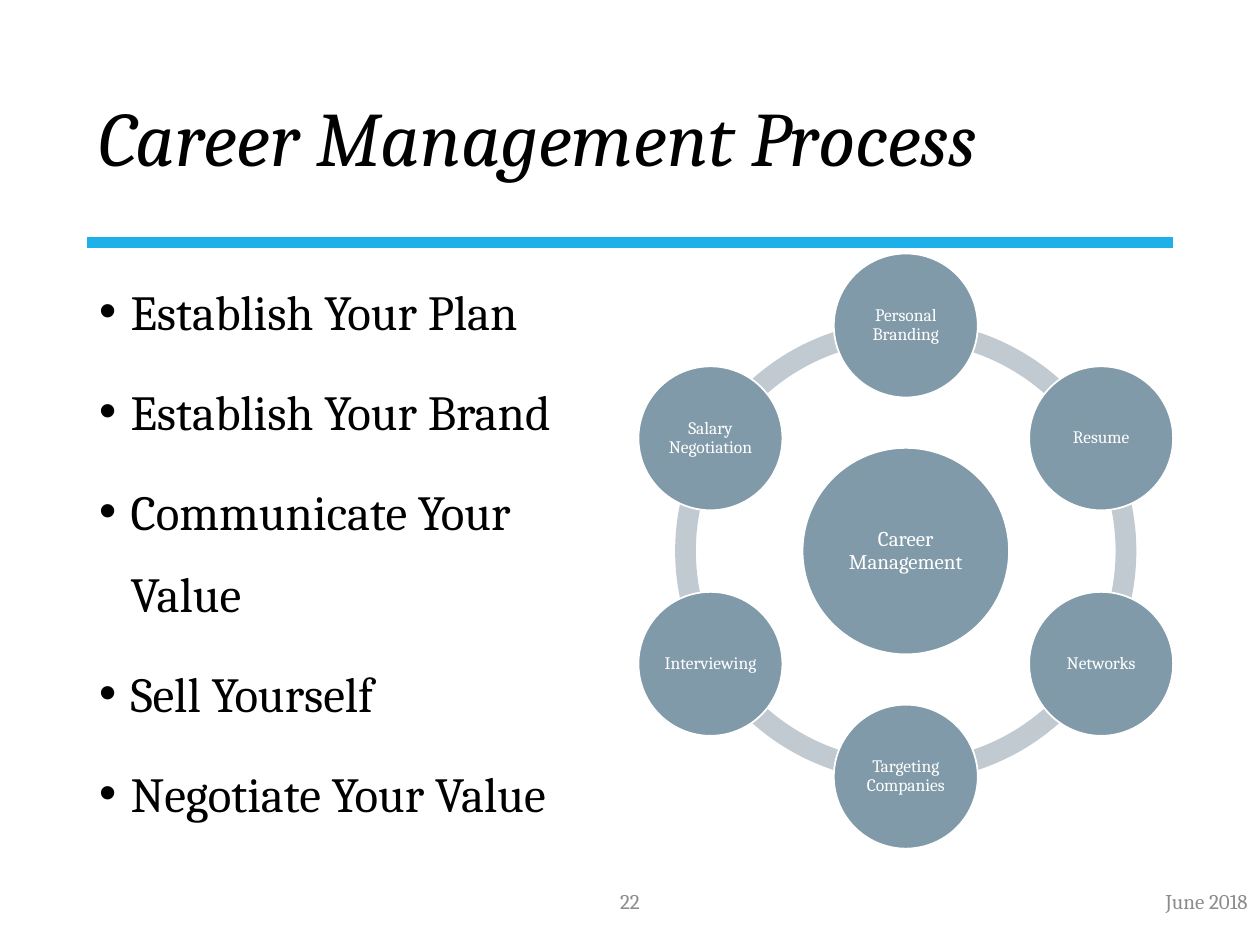
import math

import lxml.etree
import pptx
import pptx.dml.color
import pptx.enum.shapes
import pptx.enum.text
import pptx.oxml.ns
import pptx.util

Pt = pptx.util.Pt
Shape = pptx.enum.shapes.MSO_SHAPE
Align = pptx.enum.text.PP_ALIGN
Anchor = pptx.enum.text.MSO_ANCHOR
qn = pptx.oxml.ns.qn

COLORS = {
    "text": "000000",
    "rule": "1DB0E9",
    "node": "819AA9",
    "ring": "C1CAD1",
    "light": "FFFFFF",
    "footer": "8C8C8C",
}


class SlideBuilder:
    """Holds the style and the current slide."""

    font_name = "Cambria"

    def __init__(self, slide):
        self.slide = slide

    def color(self, name):
        return pptx.dml.color.RGBColor.from_string(COLORS[name])

    def style(self, para, size, color, align, spacing=1.0, italic=False):
        para.alignment = align
        para.line_spacing = spacing
        para.font.name = self.font_name
        para.font.size = Pt(size)
        para.font.italic = italic
        para.font.color.rgb = self.color(color)

    def text_box(self, left, top, width, height, anchor):
        box = self.slide.shapes.add_textbox(Pt(left), Pt(top), Pt(width), Pt(height))
        box.text_frame.word_wrap = True
        box.text_frame.vertical_anchor = anchor
        return box.text_frame

    def text(self, words, left, top, width, height, size, color, align, **style):
        frame = self.text_box(left, top, width, height, Anchor.MIDDLE)
        para = frame.paragraphs[0]
        para.text = words
        self.style(para, size, color, align, **style)

    def bullets(self, items, left, top, width, height, size, indent):
        frame = self.text_box(left, top, width, height, Anchor.TOP)
        for index, item in enumerate(items):
            para = frame.paragraphs[0] if index == 0 else frame.add_paragraph()
            para.text = item
            if index:
                para.space_before = Pt(10)
            properties = para._p.get_or_add_pPr()
            properties.set("marL", str(Pt(indent)))
            properties.set("indent", str(-Pt(indent)))
            lxml.etree.SubElement(properties, qn("a:buFont"), typeface="Arial")
            lxml.etree.SubElement(properties, qn("a:buChar"), char="•")
            self.style(para, size, "text", Align.LEFT, spacing=1.4)

    def rule(self, left, right, y, width):
        line = self.slide.shapes.add_connector(
            pptx.enum.shapes.MSO_CONNECTOR.STRAIGHT, Pt(left), Pt(y), Pt(right), Pt(y))
        line.line.color.rgb = self.color("rule")
        line.line.width = Pt(width)
        lxml.etree.SubElement(line._element.spPr, qn("a:effectLst"))

    def round_shape(self, kind, x, y, diameter, fill):
        shape = self.slide.shapes.add_shape(
            kind, Pt(x - diameter / 2), Pt(y - diameter / 2), Pt(diameter), Pt(diameter))
        shape.shadow.inherit = False
        shape.fill.solid()
        shape.fill.fore_color.rgb = self.color(fill)
        return shape

    def arc(self, x, y, diameter, start, end, thickness):
        shape = self.round_shape(Shape.BLOCK_ARC, x, y, diameter, "ring")
        shape.line.fill.background()
        # Angles are stored in 1/60000 degree, adjustments in 1/100000
        shape.adjustments[0] = start * 0.6
        shape.adjustments[1] = end * 0.6
        shape.adjustments[2] = thickness

    def node(self, words, x, y, diameter, size):
        shape = self.round_shape(Shape.OVAL, x, y, diameter, "node")
        shape.line.color.rgb = self.color("light")
        shape.line.width = Pt(1)
        frame = shape.text_frame
        frame.word_wrap = True
        frame.vertical_anchor = Anchor.MIDDLE
        frame.margin_left = frame.margin_right = Pt(1)
        frame.margin_top = frame.margin_bottom = Pt(1)
        para = frame.paragraphs[0]
        para.text = words
        self.style(para, size, "light", Align.CENTER, spacing=0.9)


def main():
    deck = pptx.Presentation()
    deck.slide_width, deck.slide_height = Pt(720), Pt(540)
    page = SlideBuilder(deck.slides.add_slide(deck.slide_layouts[6]))

    # Title and rule
    page.rule(49.5, 670.5, 138.5, 6)
    page.text("Career Management Process", 49.5, 29, 621, 104, 44, "text",
              Align.LEFT, spacing=0.9, italic=True)

    # Bullet list
    steps = ["Establish Your Plan", "Establish Your Brand", "Communicate Your Value",
             "Sell Yourself", "Negotiate Your Value"]
    page.bullets(steps, 49.5, 144, 306, 343, 28, 18)

    # Ring of topics, clockwise from the top
    topics = ["Personal Branding", "Resume", "Networks", "Targeting Companies",
              "Interviewing", "Salary Negotiation"]
    center_x, center_y, radius = 517.6, 314.9, 128.9
    step = 360 / len(topics)
    angles = [index * step - 90 for index in range(len(topics))]
    for angle in angles:
        page.arc(center_x, center_y, 263.5, angle % 360, (angle + step) % 360, 0.045)
    page.node("Career Management", center_x, center_y, 118, 12)
    for topic, angle in zip(topics, angles):
        turn = math.radians(angle)
        page.node(topic, center_x + radius * math.cos(turn),
                  center_y + radius * math.sin(turn), 82.3, 10)

    # Footer
    page.text("June 2018", 558, 500.5, 162, 29, 12, "footer", Align.RIGHT)
    page.text("22", 279, 500.5, 162, 29, 12, "footer", Align.CENTER)

    deck.save("out.pptx")


if __name__ == "__main__":
    main()
